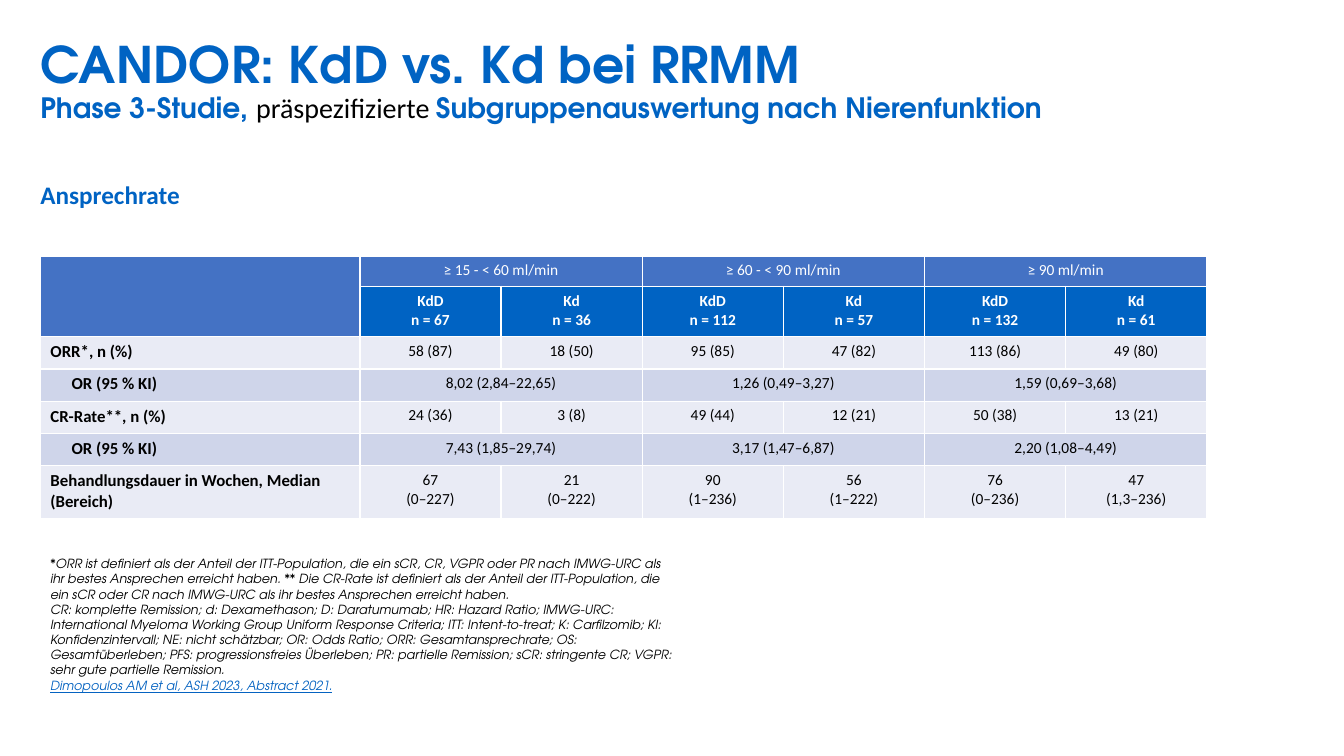
from pptx import Presentation
from pptx.dml.color import RGBColor
from pptx.enum.text import MSO_ANCHOR, MSO_AUTO_SIZE, PP_ALIGN
from pptx.util import Inches, Pt

CENTER = PP_ALIGN.CENTER
BOTTOM = MSO_ANCHOR.BOTTOM
TOP = MSO_ANCHOR.TOP
GROW = MSO_AUTO_SIZE.SHAPE_TO_FIT_TEXT
NO_FIT = MSO_AUTO_SIZE.NONE

BLUE = RGBColor(0x00, 0x63, 0xC3)
HEADER_BLUE = RGBColor(0x44, 0x72, 0xC4)
LINK_BLUE = RGBColor(0x05, 0x63, 0xC1)
LIGHT_BAND = RGBColor(0xE9, 0xEB, 0xF5)
DARK_BAND = RGBColor(0xCF, 0xD5, 0xEA)
WHITE = RGBColor(0xFF, 0xFF, 0xFF)
BLACK = RGBColor(0x00, 0x00, 0x00)

DISPLAY_FONT = "TeX Gyre Adventor"
TEXT_FONT = "Calibri"
LEFT = 0.4

RANGES = ["≥ 15 - < 60 ml/min", "≥ 60 - < 90 ml/min", "≥ 90 ml/min"]
ARMS = ["KdD\nn = 67", "Kd\nn = 36", "KdD\nn = 112",
        "Kd\nn = 57", "KdD\nn = 132", "Kd\nn = 61"]
# Three values span both arms of a range, six values stand one per arm
RESULTS = [
    ("ORR*, n (%)",
     ["58 (87)", "18 (50)", "95 (85)", "47 (82)", "113 (86)", "49 (80)"]),
    ("OR (95 % KI)",
     ["8,02 (2,84–22,65)", "1,26 (0,49–3,27)", "1,59 (0,69–3,68)"]),
    ("CR-Rate**, n (%)",
     ["24 (36)", "3 (8)", "49 (44)", "12 (21)", "50 (38)", "13 (21)"]),
    ("OR (95 % KI)",
     ["7,43 (1,85–29,74)", "3,17 (1,47–6,87)", "2,20 (1,08–4,49)"]),
    ("Behandlungsdauer in Wochen, Median (Bereich)",
     ["67\n(0–227)", "21\n(0–222)", "90\n(1–236)",
      "56\n(1–222)", "76\n(0–236)", "47\n(1,3–236)"]),
]
COLUMN_WIDTHS = [3.17] + [1.4] * 6
ROW_HEIGHTS = [0.3, 0.5] + [0.32] * 4 + [0.53]

DEFINITIONS = (
    "*ORR ist definiert als der Anteil der ITT-Population, die ein sCR, CR, VGPR oder PR "
    "nach IMWG-URC als ihr bestes Ansprechen erreicht haben. ** Die CR-Rate ist definiert "
    "als der Anteil der ITT-Population, die ein sCR oder CR nach IMWG-URC als ihr bestes "
    "Ansprechen erreicht haben.")
ABBREVIATIONS = (
    "CR: komplette Remission; d: Dexamethason; D: Daratumumab; HR: Hazard Ratio; IMWG-URC: "
    "International Myeloma Working Group Uniform Response Criteria; ITT: Intent-to-treat; "
    "K: Carfilzomib; KI: Konfidenzintervall; NE: nicht schätzbar; OR: Odds Ratio; ORR: "
    "Gesamtansprechrate; OS: Gesamtüberleben; PFS: progressionsfreies Überleben; PR: "
    "partielle Remission; sCR: stringente CR; VGPR: sehr gute partielle Remission.")
CITATION = "Dimopoulos AM et al, ASH 2023, Abstract 2021."


def add_run(paragraph, text, size=11, font=TEXT_FONT, color=BLACK,
            bold=False, italic=False, underline=False):
    run = paragraph.add_run()
    run.text = text
    style = run.font
    style.size, style.name = Pt(size), font
    style.bold, style.italic, style.underline = bold, italic, underline
    style.color.rgb = color


def next_paragraph(frame, index):
    return frame.add_paragraph() if index else frame.paragraphs[0]


class SlideBuilder:
    def __init__(self, slide):
        self.slide = slide

    def text_box(self, left, top, width, height, inset=True, anchor=TOP, fit=NO_FIT):
        box = self.slide.shapes.add_textbox(
            Inches(left), Inches(top), Inches(width), Inches(height))
        frame = box.text_frame
        frame.word_wrap = True
        frame.auto_size = fit
        frame.vertical_anchor = anchor
        if not inset:
            frame.margin_left = frame.margin_right = Inches(0)
            frame.margin_top = frame.margin_bottom = Inches(0)
        return frame

    def table(self, left, top, widths, heights):
        table = self.slide.shapes.add_table(
            len(heights), len(widths), Inches(left), Inches(top),
            Inches(sum(widths)), Inches(sum(heights))).table
        for column, width in zip(table.columns, widths):
            column.width = Inches(width)
        for row, height in zip(table.rows, heights):
            row.height = Inches(height)
        return table

    def cell(self, table, row, column, text, fill, rows=1, columns=1,
             align=None, indent=0, **text_format):
        cell = table.cell(row, column)
        if rows > 1 or columns > 1:
            cell.merge(table.cell(row + rows - 1, column + columns - 1))
        cell.fill.solid()
        cell.fill.fore_color.rgb = fill
        for index, line in enumerate(text.split("\n") if text else []):
            paragraph = next_paragraph(cell.text_frame, index)
            paragraph.alignment = align
            if indent:
                paragraph.level = 1
                properties = paragraph._p.get_or_add_pPr()
                properties.set("marL", str(Inches(indent)))
                properties.set("indent", "0")
            add_run(paragraph, line, **text_format)


def main():
    deck = Presentation()
    deck.slide_width, deck.slide_height = Inches(13.33), Inches(7.5)
    builder = SlideBuilder(deck.slides.add_slide(deck.slide_layouts[6]))

    # Footnotes
    footnotes = builder.text_box(LEFT, 5.2, 6.39, 1.72, anchor=BOTTOM)
    for index, note in enumerate([DEFINITIONS, ABBREVIATIONS, CITATION]):
        cited = note == CITATION
        add_run(next_paragraph(footnotes, index), note, size=9, font=DISPLAY_FONT,
                italic=True, underline=cited, color=LINK_BLUE if cited else BLACK)

    # Title and subtitle
    title = builder.text_box(LEFT, 0.4, 12.53, 0.94, inset=False, fit=GROW).paragraphs[0]
    title.line_spacing = 0.9
    heading = dict(font=DISPLAY_FONT, color=BLUE, bold=True)
    add_run(title, "CANDOR: KdD vs. Kd bei RRMM ", size=36, **heading)
    title.add_line_break()
    add_run(title, "Phase 3-Studie, ", size=20, **heading)
    add_run(title, "präspezifizierte ", size=20)
    add_run(title, "Subgruppenauswertung nach Nierenfunktion", size=20, **heading)

    # Table header
    table = builder.table(LEFT, 2.54, COLUMN_WIDTHS, ROW_HEIGHTS)
    builder.cell(table, 0, 0, "", HEADER_BLUE, rows=2)
    for index, clearance in enumerate(RANGES):
        builder.cell(table, 0, 1 + 2 * index, clearance, HEADER_BLUE, columns=2,
                     align=CENTER, color=WHITE)
    for column, arm in enumerate(ARMS, start=1):
        builder.cell(table, 1, column, arm, BLUE, align=CENTER, color=WHITE, bold=True)

    # Table results
    for row, (label, values) in enumerate(RESULTS, start=2):
        span = len(ARMS) // len(values)
        band = DARK_BAND if span == 2 else LIGHT_BAND
        builder.cell(table, row, 0, label, band, size=12, bold=True,
                     indent=0.21 if span == 2 else 0)
        for index, value in enumerate(values):
            builder.cell(table, row, 1 + span * index, value, band,
                         columns=span, align=CENTER)

    # Section heading
    section = builder.text_box(LEFT, 1.8, 4.99, 0.28, inset=False, fit=GROW).paragraphs[0]
    section.line_spacing = Pt(20.3)
    add_run(section, "Ansprechrate", size=18, color=BLUE, bold=True)

    deck.save("out.pptx")


if __name__ == "__main__":
    main()
